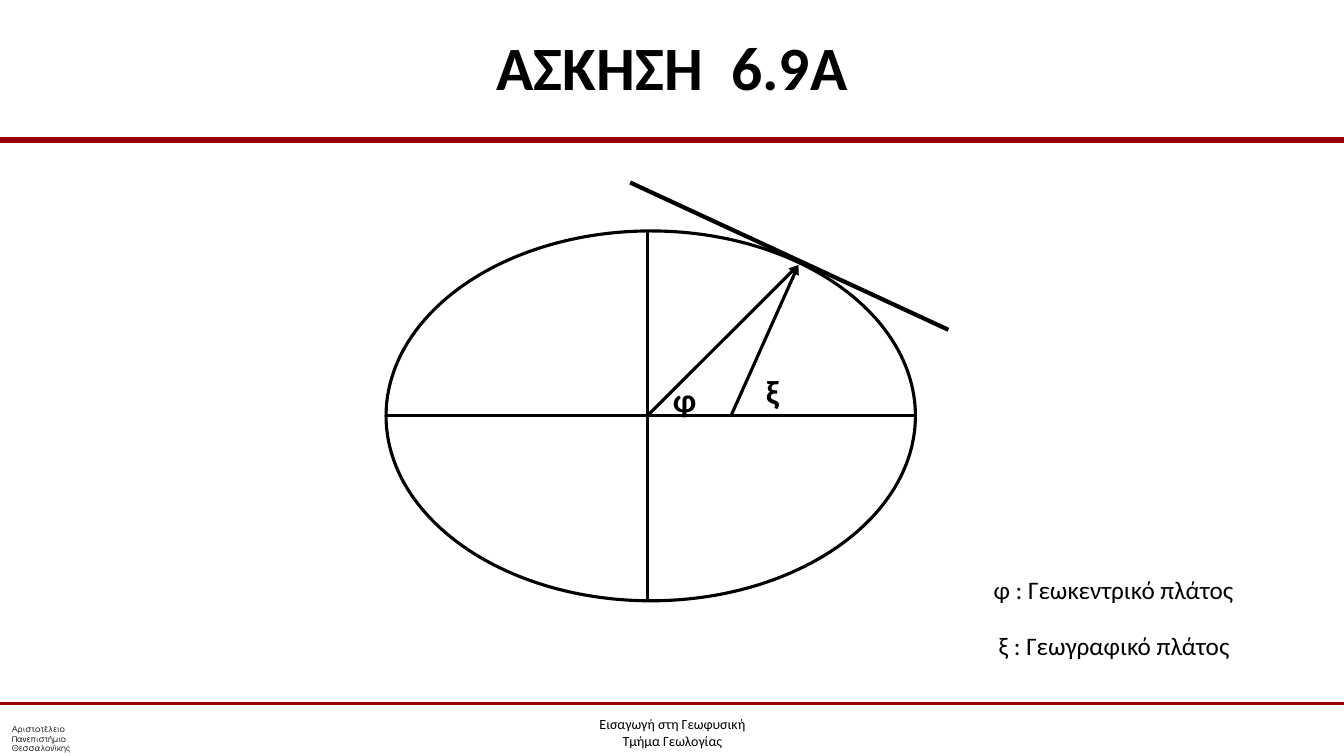
from dataclasses import dataclass

from lxml import etree
from pptx import Presentation
from pptx.dml.color import RGBColor
from pptx.enum.shapes import MSO_CONNECTOR, MSO_SHAPE
from pptx.enum.text import MSO_ANCHOR, PP_ALIGN
from pptx.oxml.ns import qn
from pptx.shapes.autoshape import Shape
from pptx.slide import Slide
from pptx.text.text import Font
from pptx.util import Cm, Pt

STRAIGHT = MSO_CONNECTOR.STRAIGHT
OVAL = MSO_SHAPE.OVAL
TOP, MIDDLE = MSO_ANCHOR.TOP, MSO_ANCHOR.MIDDLE
LEFT, CENTER = PP_ALIGN.LEFT, PP_ALIGN.CENTER

BLACK, WHITE, DARK_RED = "000000", "FFFFFF", "990000"
BODY_FONT, UNIVERSITY_FONT = "Calibri", "TeX Gyre Adventor"

SLIDE_WIDTH, SLIDE_HEIGHT = 33.87, 19.05
OUTLINE = 2.25

# Ellipse and the points of its construction, in centimetres
ELLIPSE_LEFT, ELLIPSE_TOP = 9.73, 5.82
ELLIPSE_WIDTH, ELLIPSE_HEIGHT = 13.34, 9.32
ELLIPSE_RIGHT = ELLIPSE_LEFT + ELLIPSE_WIDTH
ELLIPSE_BOTTOM = ELLIPSE_TOP + ELLIPSE_HEIGHT
EQUATOR_Y = ELLIPSE_TOP + ELLIPSE_HEIGHT / 2
POLAR_AXIS_X = 16.31
CENTRE = (POLAR_AXIS_X, EQUATOR_Y)
NORMAL_FOOT = (18.42, EQUATOR_Y)
SURFACE_POINT = (20.12, 6.68)


@dataclass(frozen=True)
class Line:
    start: tuple[float, float]
    end: tuple[float, float]
    width: float = OUTLINE
    color: str = BLACK
    arrow: bool = False


@dataclass(frozen=True)
class Label:
    text: str
    left: float
    top: float
    width: float
    height: float
    size: float
    bold: bool = False
    font: str = BODY_FONT
    align: PP_ALIGN = LEFT
    anchor: MSO_ANCHOR = TOP
    wrap: bool = True
    vertical_inset: float = 0.13
    first_line_spacing: float = 1.0


RULES = [
    Line((0, 3.53), (SLIDE_WIDTH, 3.53), 4, DARK_RED),
    Line((0, 17.73), (SLIDE_WIDTH, 17.73), 2, DARK_RED),
]

CONSTRUCTION = [
    Line((ELLIPSE_LEFT, EQUATOR_Y), (ELLIPSE_RIGHT, EQUATOR_Y)),
    Line((POLAR_AXIS_X, ELLIPSE_TOP), (POLAR_AXIS_X, ELLIPSE_BOTTOM)),
    Line(CENTRE, SURFACE_POINT, arrow=True),
    Line((15.88, 4.6), (23.9, 8.31), 3),
    Line(NORMAL_FOOT, SURFACE_POINT, arrow=True),
]

LABELS = [
    Label("Αριστοτέλειο\nΠανεπιστήμιο\nΘεσσαλονίκης", 0.05, 18.19, 2.67, 0.86, 5.8,
          font=UNIVERSITY_FONT, anchor=MIDDLE),
    Label("Εισαγωγή στη Γεωφυσική\nΤμήμα Γεωλογίας", 11.61, 17.53, 10.67, 1.52, 10,
          align=CENTER, vertical_inset=0, first_line_spacing=2.2),
    Label("ξ", 19.05, 9.22, 0.84, 1.27, 24, bold=True),
    Label("φ", 16.71, 9.42, 1.12, 1.3, 24, bold=True, wrap=False),
    Label("φ : Γεωκεντρικό πλάτος", 24.79, 14.33, 6.63, 1.02, 18, wrap=False),
    Label("ξ : Γεωγραφικό πλάτος", 24.92, 15.75, 6.4, 1.02, 18, wrap=False),
]

TITLE = Label("ΑΣΚΗΣΗ", 1.7, 0.08, 30.48, 3.18, 44, bold=True, align=CENTER, anchor=MIDDLE)
TITLE_NUMBER = "6.9A"
TITLE_GAP = 10


def rgb(color: str) -> RGBColor:
    return RGBColor.from_string(color)


def draw_line(slide: Slide, line: Line) -> None:
    connector = slide.shapes.add_connector(
        STRAIGHT, *(Cm(value) for value in (*line.start, *line.end)))
    connector.line.color.rgb = rgb(line.color)
    connector.line.width = Pt(line.width)
    properties = connector.element.find(qn("p:spPr"))
    if line.arrow:
        etree.SubElement(properties.find(qn("a:ln")), qn("a:tailEnd"), type="triangle")
    etree.SubElement(properties, qn("a:effectLst"))


def draw_ellipse(slide: Slide) -> None:
    ellipse = slide.shapes.add_shape(
        OVAL, Cm(ELLIPSE_LEFT), Cm(ELLIPSE_TOP), Cm(ELLIPSE_WIDTH), Cm(ELLIPSE_HEIGHT))
    ellipse.shadow.inherit = False
    ellipse.fill.solid()
    ellipse.fill.fore_color.rgb = rgb(WHITE)
    ellipse.line.color.rgb = rgb(BLACK)
    ellipse.line.width = Pt(OUTLINE)


def format_font(font: Font, label: Label) -> None:
    font.name = label.font
    font.size = Pt(label.size)
    font.bold = label.bold
    font.color.rgb = rgb(BLACK)


def draw_label(slide: Slide, label: Label) -> Shape:
    box = slide.shapes.add_textbox(
        Cm(label.left), Cm(label.top), Cm(label.width), Cm(label.height))
    frame = box.text_frame
    frame.word_wrap = label.wrap
    frame.vertical_anchor = label.anchor
    frame.margin_top = frame.margin_bottom = Cm(label.vertical_inset)
    frame.text = label.text
    for paragraph in frame.paragraphs:
        paragraph.alignment = label.align
        for run in paragraph.runs:
            format_font(run.font, label)
    if label.first_line_spacing != 1:
        frame.paragraphs[0].line_spacing = label.first_line_spacing
    return box


def draw_title(slide: Slide) -> None:
    """Draw the title with a widened space before the exercise number."""
    box = draw_label(slide, TITLE)
    paragraph = box.text_frame.paragraphs[0]
    for text in (" ", TITLE_NUMBER):
        run = paragraph.add_run()
        run.text = text
        format_font(run.font, TITLE)
    space_properties = list(box.element.iter(qn("a:rPr")))[1]
    space_properties.set("spc", str(TITLE_GAP * 100))


def main() -> None:
    presentation = Presentation()
    presentation.slide_width = Cm(SLIDE_WIDTH)
    presentation.slide_height = Cm(SLIDE_HEIGHT)
    slide = presentation.slides.add_slide(presentation.slide_layouts[6])

    for rule in RULES:
        draw_line(slide, rule)
    draw_ellipse(slide)
    for line in CONSTRUCTION:
        draw_line(slide, line)
    for label in LABELS:
        draw_label(slide, label)
    draw_title(slide)

    presentation.save("out.pptx")


if __name__ == "__main__":
    main()
